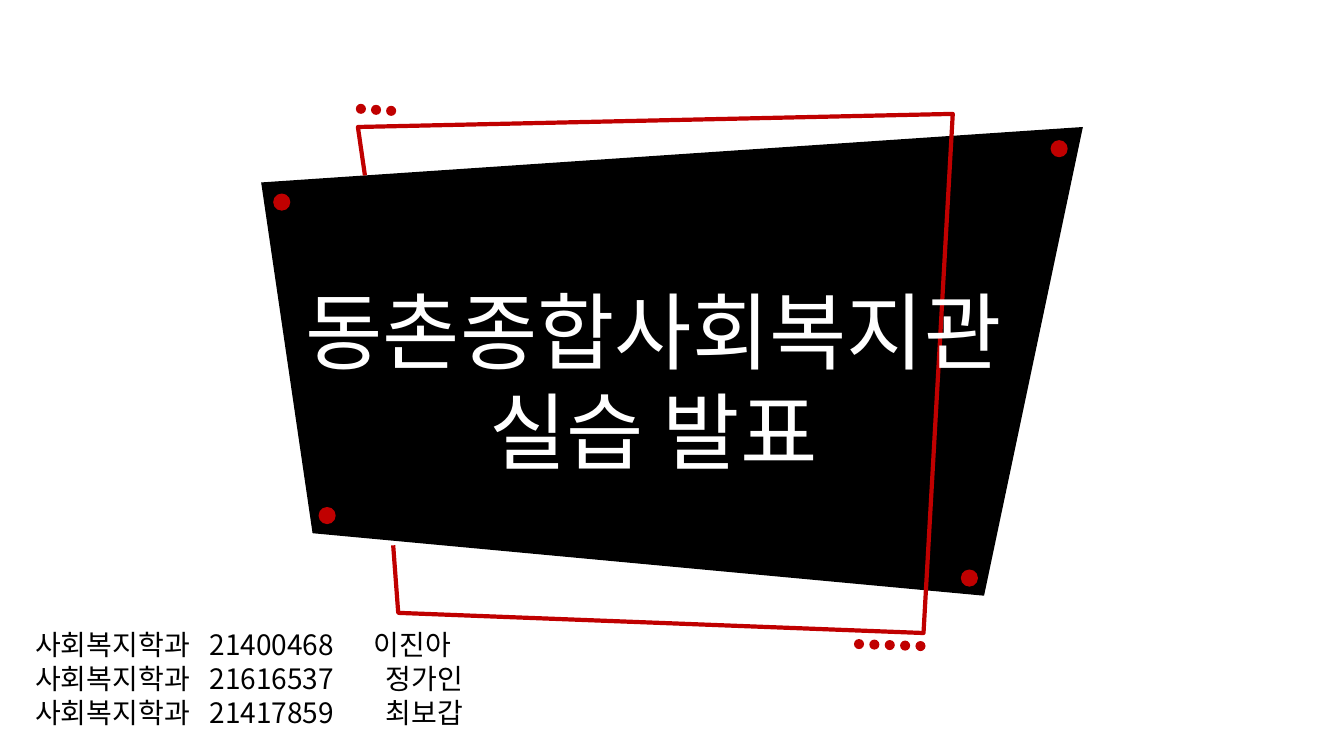
"""Build the title slide of a social work field practice presentation."""
import pptx
import pptx.dml.color
import pptx.enum.shapes
import pptx.enum.text
import pptx.util
import lxml.etree

PX = 9144
FONT = "Noto Sans CJK KR"
BLACK, RED, WHITE = "000000", "C00000", "FFFFFF"

TITLE = ["동촌종합사회복지관", "실습 발표"]
TITLE_BOX = (259, 272, 778, 212)
STUDENTS = [
    ("사회복지학과", "21400468", "이진아"),
    ("사회복지학과", "21616537", "정가인"),
    ("사회복지학과", "21417859", "최보갑"),
]
STUDENT_BOX = (25, 618, 527, 111)
STUDENT_TABS = [(173, 336), (173, 348), (173, 348)]

PANEL = [(259, 181), (310, 529), (976, 591), (1074, 126)]
FRAME = [(362, 174), (355, 126), (945, 113), (916, 628), (395, 608), (390, 541)]
PINS = [(271, 192), (316, 503), (953, 565), (1042, 139)]
PIN_SIZE, DOT_SIZE = 17, 10
DOT_ROWS = [
    {"start": (353, 103), "step": (15, 1), "count": 3},
    {"start": (847, 634), "step": (15.25, 0.5), "count": 5},
]


def px(length):
    return pptx.util.Emu(round(length * PX))


def rgb(value):
    return pptx.dml.color.RGBColor.from_string(value)


def style(shape, fill=None, line=None, width=3):
    shape.shadow.inherit = False
    if fill:
        shape.fill.solid()
        shape.fill.fore_color.rgb = rgb(fill)
    else:
        shape.fill.background()
    if line:
        shape.line.color.rgb = rgb(line)
        shape.line.width = pptx.util.Pt(width)
    else:
        shape.line.fill.background()


def add_outline(slide, points, closed, **look):
    builder = slide.shapes.build_freeform(*points[0], scale=PX)
    builder.add_line_segments(points[1:], close=closed)
    style(builder.convert_to_shape(), **look)


def add_dot(slide, left, top, size):
    oval = pptx.enum.shapes.MSO_SHAPE.OVAL
    dot = slide.shapes.add_shape(oval, px(left), px(top), px(size), px(size))
    style(dot, fill=RED)


def add_text(slide, box, lines, size, color, align="LEFT", wrap=True, tabs=()):
    frame = slide.shapes.add_textbox(*map(px, box)).text_frame
    frame.word_wrap = wrap
    for index, line in enumerate(lines):
        paragraph = frame.paragraphs[0] if index == 0 else frame.add_paragraph()
        paragraph.alignment = getattr(pptx.enum.text.PP_ALIGN, align)
        if tabs:
            properties = paragraph._p.get_or_add_pPr()
            namespace = "{%s}" % properties.nsmap["a"]
            stops = lxml.etree.SubElement(properties, namespace + "tabLst")
            for stop in tabs[index]:
                lxml.etree.SubElement(stops, namespace + "tab", pos=str(px(stop)), algn="l")
        run = paragraph.add_run()
        run.text = line
        run.font.size = pptx.util.Pt(size)
        run.font.color.rgb = rgb(color)
        run.font.name = FONT
        properties = run._r.get_or_add_rPr()
        namespace = "{%s}" % properties.nsmap["a"]
        lxml.etree.SubElement(properties, namespace + "ea", typeface=FONT)


def main():
    deck = pptx.Presentation()
    deck.slide_width, deck.slide_height = px(1333), px(750)
    slide = deck.slides.add_slide(deck.slide_layouts[6])

    add_outline(slide, PANEL, True, fill=BLACK)
    add_outline(slide, FRAME, False, line=RED)
    for left, top in PINS:
        add_dot(slide, left, top, PIN_SIZE)
    for row in DOT_ROWS:
        (left, top), (across, down) = row["start"], row["step"]
        for index in range(row["count"]):
            add_dot(slide, left + index * across, top + index * down, DOT_SIZE)

    add_text(slide, TITLE_BOX, TITLE, 60, WHITE, align="CENTER", wrap=False)
    rows = ["\t".join(student) for student in STUDENTS]
    add_text(slide, STUDENT_BOX, rows, 20, BLACK, tabs=STUDENT_TABS)
    deck.save("out.pptx")


if __name__ == "__main__":
    main()
